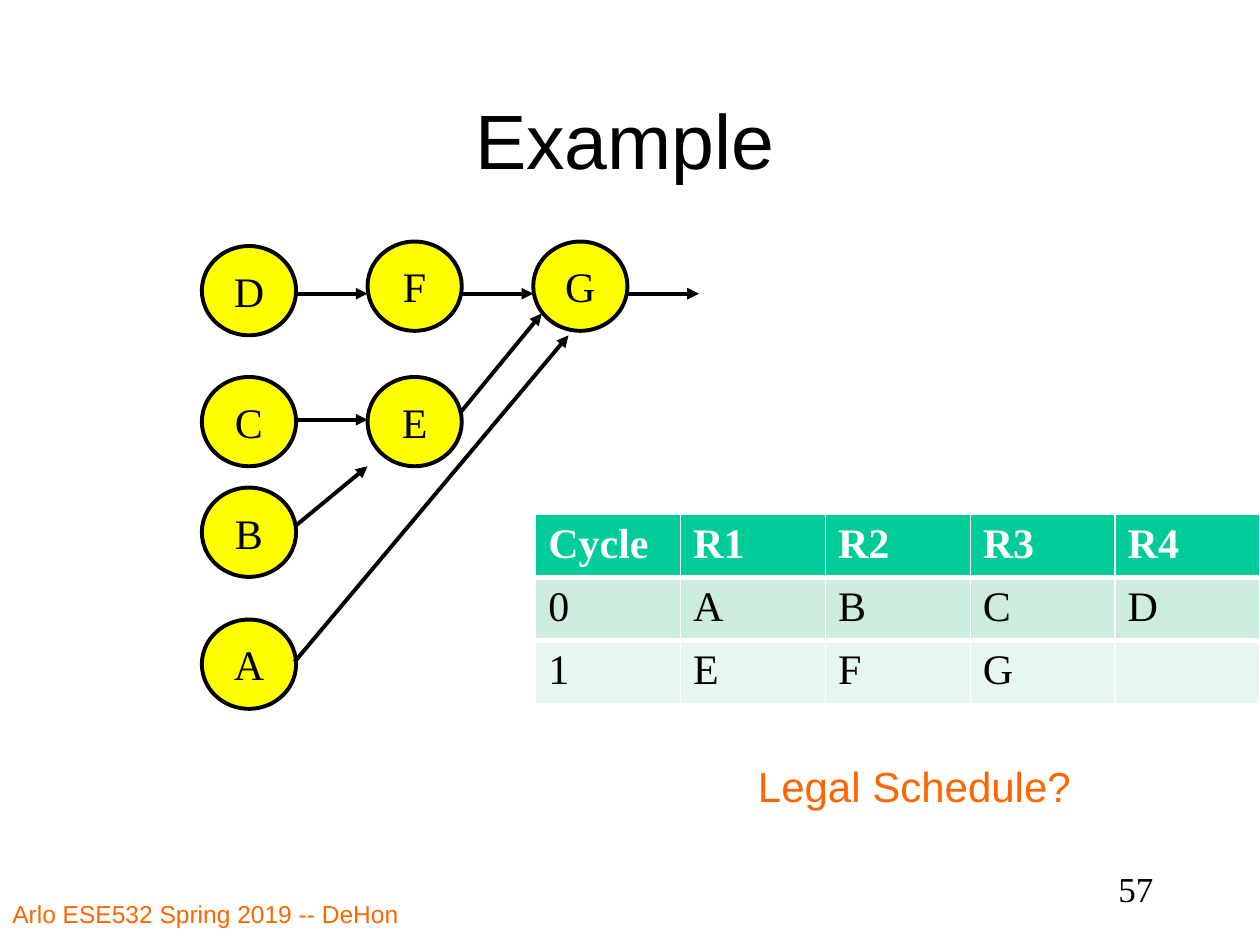
from lxml import etree
from pptx import Presentation
from pptx.dml.color import RGBColor
from pptx.enum import shapes, text
from pptx.oxml import ns
from pptx.util import Cm, Pt

BLACK = RGBColor(0x00, 0x00, 0x00)
WHITE = RGBColor(0xFF, 0xFF, 0xFF)
YELLOW = RGBColor(0xFF, 0xFF, 0x00)
ORANGE = RGBColor(0xFF, 0x66, 0x00)
GREEN = RGBColor(0x00, 0xCC, 0x99)
ROW_TINTS = [GREEN, RGBColor(0xCC, 0xEC, 0xDE), RGBColor(0xE7, 0xF6, 0xEF)]
SANS, SERIF = "Arial", "Times New Roman"


def write(frame, words, size, font, color, align=text.PP_ALIGN.LEFT, bold=False):
    paragraph = frame.paragraphs[0]
    paragraph.alignment = align
    run = paragraph.add_run()
    run.text = words
    run.font.size = Pt(size)
    run.font.name = font
    run.font.bold = bold
    run.font.color.rgb = color


prs = Presentation()
prs.slide_width, prs.slide_height = Cm(25.4), Cm(19.05)
slide = prs.slides.add_slide(prs.slide_layouts[5])

# Title
title = slide.shapes.title
title.left, title.top, title.width, title.height = Cm(1.8), Cm(1.2), Cm(21.6), Cm(3.2)
title.text_frame.vertical_anchor = text.MSO_ANCHOR.MIDDLE
write(title.text_frame, "Example", 44, SANS, BLACK, text.PP_ALIGN.CENTER)

# Footer, page number and question
for words, left, top, width, height, size, font, color, align in [
    ("Arlo ESE532 Spring 2019 -- DeHon", 0, 18, 11.63, 1.05, 14, SANS, ORANGE, text.PP_ALIGN.LEFT),
    ("57", 18.2, 17.37, 5.3, 1.27, 20, SERIF, BLACK, text.PP_ALIGN.RIGHT),
    ("Legal Schedule?", 15.03, 15.2, 7.4, 1.2, 24, SANS, ORANGE, text.PP_ALIGN.LEFT),
]:
    note = slide.shapes.add_textbox(Cm(left), Cm(top), Cm(width), Cm(height))
    note.text_frame.word_wrap = True
    write(note.text_frame, words, size, font, color, align)

# Task graph: nodes stand in three columns
FIRST_COLUMN, COLUMN_STEP = 4.07, 3.34
NODE_WIDTH, NODE_HEIGHT = 1.9, 1.8
for task, column, top in [
    ("D", 0, 4.96), ("C", 0, 7.6), ("B", 0, 9.83), ("A", 0, 12.49),
    ("F", 1, 4.87), ("E", 1, 7.6), ("G", 2, 4.87),
]:
    node = slide.shapes.add_shape(
        shapes.MSO_SHAPE.OVAL, Cm(FIRST_COLUMN + column * COLUMN_STEP), Cm(top),
        Cm(NODE_WIDTH), Cm(NODE_HEIGHT))
    node.shadow.inherit = False
    node.fill.solid()
    node.fill.fore_color.rgb = YELLOW
    node.line.color.rgb = BLACK
    node.line.width = Pt(2.25)
    node.text_frame.word_wrap = False
    node.text_frame.vertical_anchor = text.MSO_ANCHOR.MIDDLE
    write(node.text_frame, task, 24, SERIF, BLACK, text.PP_ALIGN.CENTER)

# Dependencies: level arrows fill the gaps between columns, the rest slant
GAP_START = FIRST_COLUMN + NODE_WIDTH
GAP = COLUMN_STEP - NODE_WIDTH
level = [(GAP_START + column * COLUMN_STEP, y)
         for column, y in [(0, 5.92), (1, 5.92), (2, 5.92), (0, 8.46)]]
dependencies = [(x, y, x + GAP, y) for x, y in level] + [
    (5.97, 10.59, 7.41, 9.4),    # B to E
    (5.94, 13.34, 11.46, 6.76),  # A to G
    (9.27, 8.33, 10.92, 6.32),   # E to G
]
for ends in dependencies:
    arrow = slide.shapes.add_connector(
        shapes.MSO_CONNECTOR.STRAIGHT, *[Cm(length) for length in ends])
    arrow.line.color.rgb = BLACK
    arrow.line.width = Pt(2.25)
    etree.SubElement(arrow.line._get_or_add_ln(), ns.qn("a:tailEnd"), type="triangle")
    etree.SubElement(arrow._element.spPr, ns.qn("a:effectLst"))

# Schedule table, with a thick rule under the header
schedule = [
    ["Cycle", "R1", "R2", "R3", "R4"],
    ["0", "A", "B", "C", "D"],
    ["1", "E", "F", "G", ""],
]
HEADER_RULE = {0: "a:lnB", 1: "a:lnT"}
grid = slide.shapes.add_table(3, 5, Cm(10.8), Cm(10.37), Cm(14.6), Cm(3.81)).table
for r, entries in enumerate(schedule):
    for c, entry in enumerate(entries):
        cell = grid.cell(r, c)
        if r in HEADER_RULE:
            rule = etree.SubElement(
                cell._tc.get_or_add_tcPr(), ns.qn(HEADER_RULE[r]), w=str(Pt(3)))
            ink = etree.SubElement(rule, ns.qn("a:solidFill"))
            etree.SubElement(ink, ns.qn("a:srgbClr"), val=str(WHITE))
        cell.fill.solid()
        cell.fill.fore_color.rgb = ROW_TINTS[r]
        if entry:
            write(cell.text_frame, entry, 24, SERIF, BLACK if r else WHITE, bold=r == 0)

prs.save("out.pptx")
